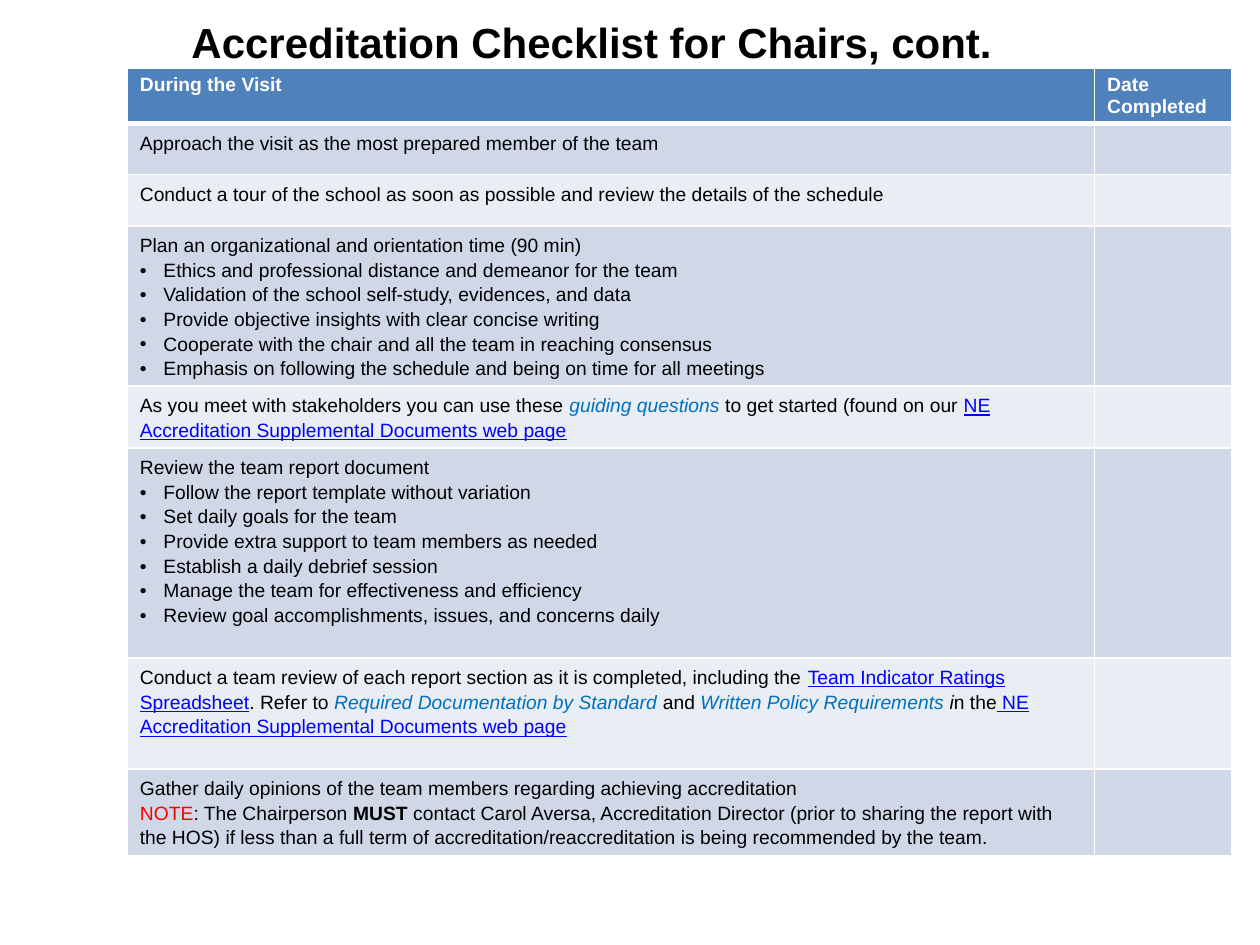
from lxml.etree import SubElement
from pptx import Presentation
from pptx.dml.color import RGBColor
from pptx.enum.text import MSO_ANCHOR, PP_ALIGN
from pptx.oxml.ns import qn
from pptx.util import Pt

TITLE = "Accreditation Checklist for Chairs, cont."
HEADERS = ["During the Visit", "Date Completed"]
COL_WIDTHS = [552.8, 78.4]
HEADER_HEIGHT = 31
STYLES = {
    "plain": ("000000", {}),
    "doc": ("0070C0", {"italic": True}),
    "link": ("0000FF", {"underline": True}),
    "italic": ("000000", {"italic": True}),
    "bold": ("000000", {"bold": True}),
    "note": ("FF0000", {}),
    "header": ("FFFFFF", {"bold": True}),
}
WEB_PAGE = "NE Accreditation Supplemental Documents web page"
ROWS = [
    (29.2, ["Approach the visit as the most prepared member of the team"], []),
    (29.2, ["Conduct a tour of the school as soon as possible and review the details of the schedule"], []),
    (91.6, ["Plan an organizational and orientation time (90 min)"], [
        "Ethics and professional distance and demeanor for the team",
        "Validation of the school self-study, evidences, and data",
        "Provide objective insights with clear concise writing",
        "Cooperate with the chair and all the team in reaching consensus",
        "Emphasis on following the schedule and being on time for all meetings",
    ]),
    (35.2, [[
        ("As you meet with stakeholders you can use these ", "plain"),
        ("guiding questions ", "doc"),
        ("to get started (found on our ", "plain"),
        (WEB_PAGE, "link"),
    ]], []),
    (120, ["Review the team report document"], [
        "Follow the report template without variation",
        "Set daily goals for the team",
        "Provide extra support to team members as needed",
        "Establish a daily debrief session",
        "Manage the team for effectiveness and efficiency",
        "Review goal accomplishments, issues, and concerns daily",
    ]),
    (63.4, [[
        ("Conduct a team review of each report section as it is completed, including the ", "plain"),
        ("Team Indicator Ratings Spreadsheet", "link"),
        (". Refer to ", "plain"),
        ("Required Documentation by Standard ", "doc"),
        ("and ", "plain"),
        ("Written Policy Requirements ", "doc"),
        ("i", "italic"),
        ("n the", "plain"),
        (" " + WEB_PAGE, "link"),
    ]], []),
    (49, [
        "Gather daily opinions of the team members regarding achieving accreditation",
        [
            ("NOTE", "note"),
            (": The Chairperson ", "plain"),
            ("MUST", "bold"),
            (" contact Carol Aversa, Accreditation Director (prior to sharing the report with the HOS) "
             "if less than a full term of accreditation/reaccreditation is being recommended by the team.", "plain"),
        ],
    ], []),
]


def rgb(value):
    """Turn a hex string into a colour."""
    return RGBColor.from_string(value)


def format_run(r, style, size=11):
    """Apply a named text style to a run."""
    color, flags = STYLES[style]
    r.font.name = "Arial"
    r.font.size = Pt(size)
    r.font.bold = False
    r.font.color.rgb = rgb(color)
    for name, value in flags.items():
        setattr(r.font, name, value)


def write(p, content, style="plain"):
    """Fill a paragraph from a string or from styled pieces."""
    pieces = [(content, style)] if isinstance(content, str) else content
    for text, name in pieces:
        r = p.add_run()
        r.text = text
        format_run(r, name)


def add_bullet(p):
    """Give a paragraph a hanging round bullet."""
    pPr = p._p.get_or_add_pPr()
    pPr.set("marL", str(Pt(13.5)))
    pPr.set("indent", str(-Pt(13.5)))
    SubElement(pPr, qn("a:buFont"), typeface="Arial")
    SubElement(pPr, qn("a:buChar"), char="•")


def format_cell(cell, fill, bottom=1):
    """Set white borders and a solid fill on a cell."""
    tcPr = cell._tc.get_or_add_tcPr()
    for side, width in zip("LRTB", (1, 1, 1, bottom)):
        ln = SubElement(tcPr, qn(f"a:ln{side}"), w=str(Pt(width)))
        SubElement(SubElement(ln, qn("a:solidFill")), qn("a:srgbClr"), val="FFFFFF")
    cell.fill.solid()
    cell.fill.fore_color.rgb = rgb(fill)


def add_title(s):
    """Place the title so that its letters end above the table."""
    sp = s.shapes.title
    sp.left, sp.top, sp.width, sp.height = Pt(102.2), Pt(9.4), Pt(581.8), Pt(49)
    tf = sp.text_frame
    tf.text = TITLE
    tf.vertical_anchor = MSO_ANCHOR.TOP
    tf.margin_top = 0
    p = tf.paragraphs[0]
    p.alignment = PP_ALIGN.LEFT
    format_run(p.runs[0], "bold", 24)


def add_checklist(s):
    """Add the checklist table."""
    heights = [HEADER_HEIGHT] + [row[0] for row in ROWS]
    table = s.shapes.add_table(len(heights), len(COL_WIDTHS), Pt(72.7), Pt(38.9),
                               Pt(sum(COL_WIDTHS)), Pt(sum(heights))).table
    for col, width in zip(table.columns, COL_WIDTHS):
        col.width = Pt(width)
    for row, height in zip(table.rows, heights):
        row.height = Pt(height)
    for i, text in enumerate(HEADERS):
        cell = table.cell(0, i)
        format_cell(cell, "4F81BD", 3)
        write(cell.text_frame.paragraphs[0], text, "header")
    for i, (_, lines, bullets) in enumerate(ROWS, 1):
        for cell in table.rows[i].cells:
            format_cell(cell, "D0D8E8" if i % 2 else "E9EDF4")
        tf = table.cell(i, 0).text_frame
        for j, content in enumerate(lines + bullets):
            p = tf.add_paragraph() if j else tf.paragraphs[0]
            if j >= len(lines):
                add_bullet(p)
            p.line_spacing = 1.15
            write(p, content)


def main():
    """Build the slide and save it."""
    prs = Presentation()
    prs.slide_width, prs.slide_height = Pt(720), Pt(540)
    s = prs.slides.add_slide(prs.slide_layouts[5])
    add_title(s)
    add_checklist(s)
    prs.save("out.pptx")


if __name__ == "__main__":
    main()
